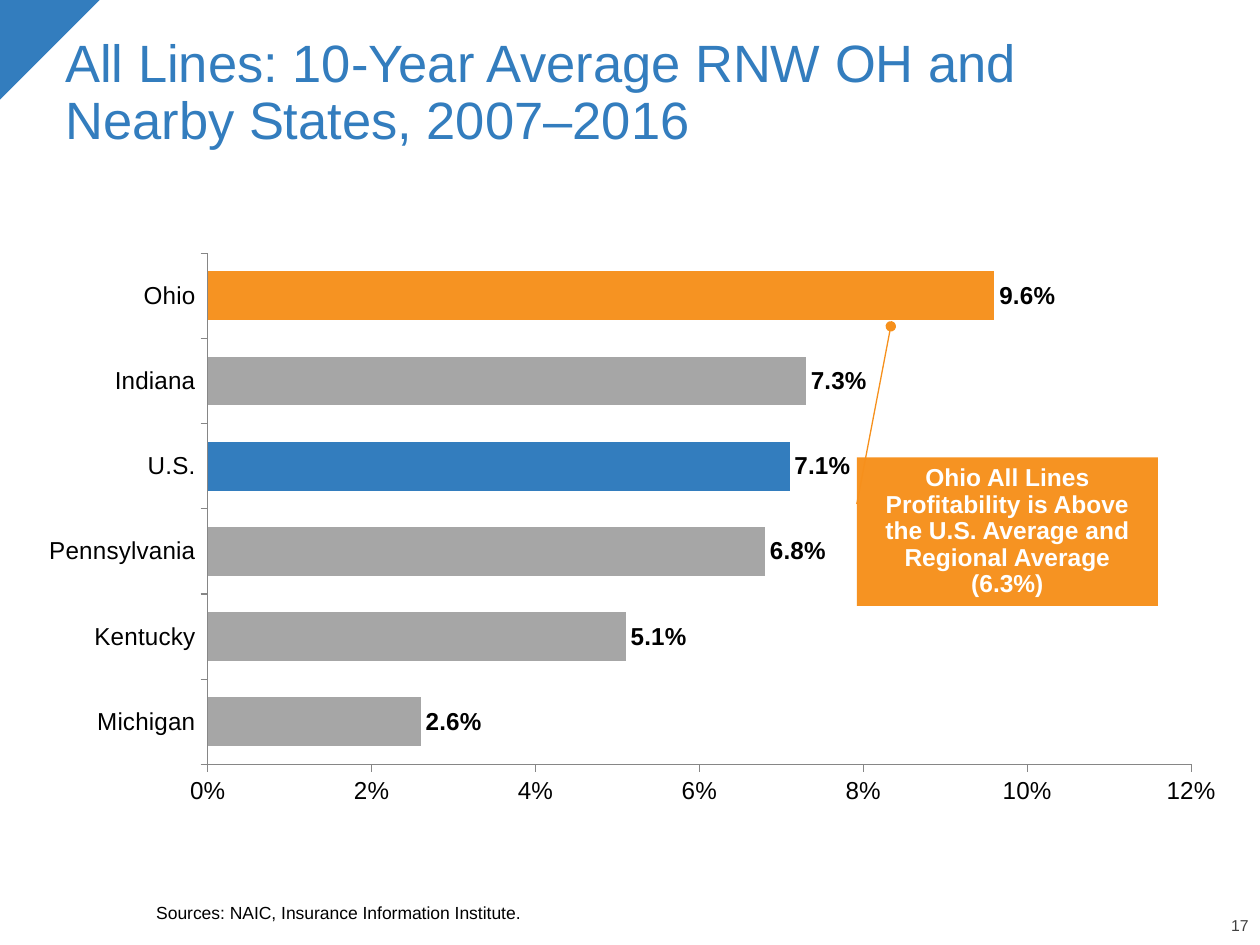
import pptx
import pptx.chart.data
import pptx.dml.color
import pptx.enum.chart
import pptx.enum.shapes
import pptx.enum.text
import pptx.oxml.ns
import pptx.oxml.xmlchemy
import pptx.util

# Content
TITLE = "All Lines: 10-Year Average RNW OH and\vNearby States, 2007–2016"
RETURNS = [("Michigan", 0.026), ("Kentucky", 0.051), ("Pennsylvania", 0.068),
           ("U.S.", 0.071), ("Indiana", 0.073), ("Ohio", 0.096)]
CALLOUT = ("Ohio All Lines Profitability is Above the U.S. Average "
           "and Regional Average (6.3%)")
SOURCE = "Sources: NAIC, Insurance Information Institute."
PAGE = "17"

THEME = {
    "font": "Arial", "blue": "337DBE", "orange": "F69322", "leader": "F6901C",
    "bar": "A6A6A6", "axis": "868686", "ink": "000000", "page": "404040",
    "white": "FFFFFF",
    "title_size": 30, "body_size": 14, "source_size": 10, "page_size": 9,
}
HIGHLIGHTS = {"U.S.": THEME["blue"], "Ohio": THEME["orange"]}
PLOT = {"x": 0.126, "y": 0.064, "w": 0.854, "h": 0.81}

Inches, Pt = pptx.util.Inches, pptx.util.Pt
ALIGN = pptx.enum.text.PP_ALIGN
ANCHOR = pptx.enum.text.MSO_ANCHOR
SHAPE = pptx.enum.shapes.MSO_SHAPE
CHART = pptx.enum.chart


def rgb(code):
    return pptx.dml.color.RGBColor.from_string(code)


def style_font(font, size, color, bold=False):
    font.name = THEME["font"]
    font.size = Pt(size)
    font.bold = bold
    font.color.rgb = rgb(color)


def write(shape, text, size, color, bold=False, align=ALIGN.LEFT,
          anchor=ANCHOR.TOP, inset=(0, 0)):
    frame = shape.text_frame
    frame.word_wrap = True
    frame.vertical_anchor = anchor
    frame.margin_left = frame.margin_right = Inches(inset[0])
    frame.margin_top = frame.margin_bottom = Inches(inset[1])
    paragraph = frame.paragraphs[0]
    paragraph.text = text
    paragraph.alignment = align
    paragraph.line_spacing = 0.9
    style_font(paragraph.font, size, color, bold)


def box(*place):
    return slide.shapes.add_textbox(*map(Inches, place))


def filled(preset, color, *place):
    shape = slide.shapes.add_shape(preset, *map(Inches, place))
    shape.shadow.inherit = False
    shape.fill.solid()
    shape.fill.fore_color.rgb = rgb(color)
    shape.line.fill.background()
    return shape


def sub(parent, tag, **attributes):
    child = pptx.oxml.xmlchemy.OxmlElement(tag)
    for name, value in attributes.items():
        child.set(name, str(value))
    parent.append(child)
    return child


deck = pptx.Presentation()
deck.slide_width, deck.slide_height = Inches(10), Inches(7.5)
slide = deck.slides.add_slide(deck.slide_layouts[6])

# Corner, page number, title and source
corner = filled(SHAPE.RIGHT_TRIANGLE, THEME["blue"], -0.01, 0, 0.8, 0.8)
corner.rotation = 90
write(box(9.43, 7.29, 0.48, 0.13), PAGE, THEME["page_size"], THEME["page"],
      align=ALIGN.RIGHT, anchor=ANCHOR.BOTTOM)
write(box(0.42, 0.25, 9.25, 1.04), TITLE, THEME["title_size"], THEME["blue"],
      inset=(0.1, 0.05))
write(box(1.24, 6.88, 8.4, 0.45), SOURCE, THEME["source_size"], THEME["ink"],
      anchor=ANCHOR.BOTTOM)

# Bar chart
returns = pptx.chart.data.CategoryChartData(number_format="0.0%")
returns.categories = [state for state, _ in RETURNS]
returns.add_series("Series 1", [value for _, value in RETURNS])
chart = slide.shapes.add_chart(
    CHART.XL_CHART_TYPE.BAR_CLUSTERED,
    *map(Inches, (0.39, 1.69, 9.26, 5.01)), returns).chart
chart.has_legend = chart.has_title = False
style_font(chart.font, THEME["body_size"], THEME["ink"])

bars = chart.plots[0]
bars.gap_width = 75
bars.vary_by_categories = False
series = bars.series[0]
series.format.fill.solid()
series.format.fill.fore_color.rgb = rgb(THEME["bar"])
for index, (state, _) in enumerate(RETURNS):
    if state in HIGHLIGHTS:
        fill = series.points[index].format.fill
        fill.solid()
        fill.fore_color.rgb = rgb(HIGHLIGHTS[state])

bars.has_data_labels = True
labels = bars.data_labels
labels.show_value = True
labels.number_format = "0.0%"
labels.number_format_is_linked = False
labels.position = CHART.XL_LABEL_POSITION.OUTSIDE_END
style_font(labels.font, THEME["body_size"], THEME["ink"], bold=True)

for axis in (chart.category_axis, chart.value_axis):
    axis.has_major_gridlines = False
    axis.major_tick_mark = CHART.XL_TICK_MARK.OUTSIDE
    axis.format.line.color.rgb = rgb(THEME["axis"])
    axis.format.line.width = Pt(0.75)
percent = chart.value_axis
percent.minimum_scale, percent.maximum_scale, percent.major_unit = 0, 0.12, 0.02
percent.tick_labels.number_format = "0%"
percent.tick_labels.number_format_is_linked = False

# Fixed inner plot area
plot_area = bars._element.getparent()
for automatic in plot_area.findall(pptx.oxml.ns.qn("c:layout")):
    plot_area.remove(automatic)
layout = sub(plot_area, "c:layout")
plot_area.insert(0, layout)
manual = sub(layout, "c:manualLayout")
sub(manual, "c:layoutTarget", val="inner")
for side in "xy":
    sub(manual, f"c:{side}Mode", val="edge")
for side, share in PLOT.items():
    sub(manual, f"c:{side}", val=share)

# Callout with leader to the Ohio bar
callout = filled(SHAPE.RECTANGLE, THEME["orange"], 6.8, 3.63, 2.39, 1.18)
write(callout, CALLOUT, THEME["body_size"], THEME["white"], bold=True,
      align=ALIGN.CENTER, anchor=ANCHOR.MIDDLE, inset=(0.1, 0))
leader = slide.shapes.add_connector(
    pptx.enum.shapes.MSO_CONNECTOR.STRAIGHT, *map(Inches, (6.8, 4, 7.07, 2.59)))
leader.line.color.rgb = rgb(THEME["leader"])
leader.line.width = Pt(0.75)
outline = leader._element.spPr.find(pptx.oxml.ns.qn("a:ln"))
sub(outline, "a:tailEnd", type="oval")
sub(leader._element.spPr, "a:effectLst")

deck.save("out.pptx")
